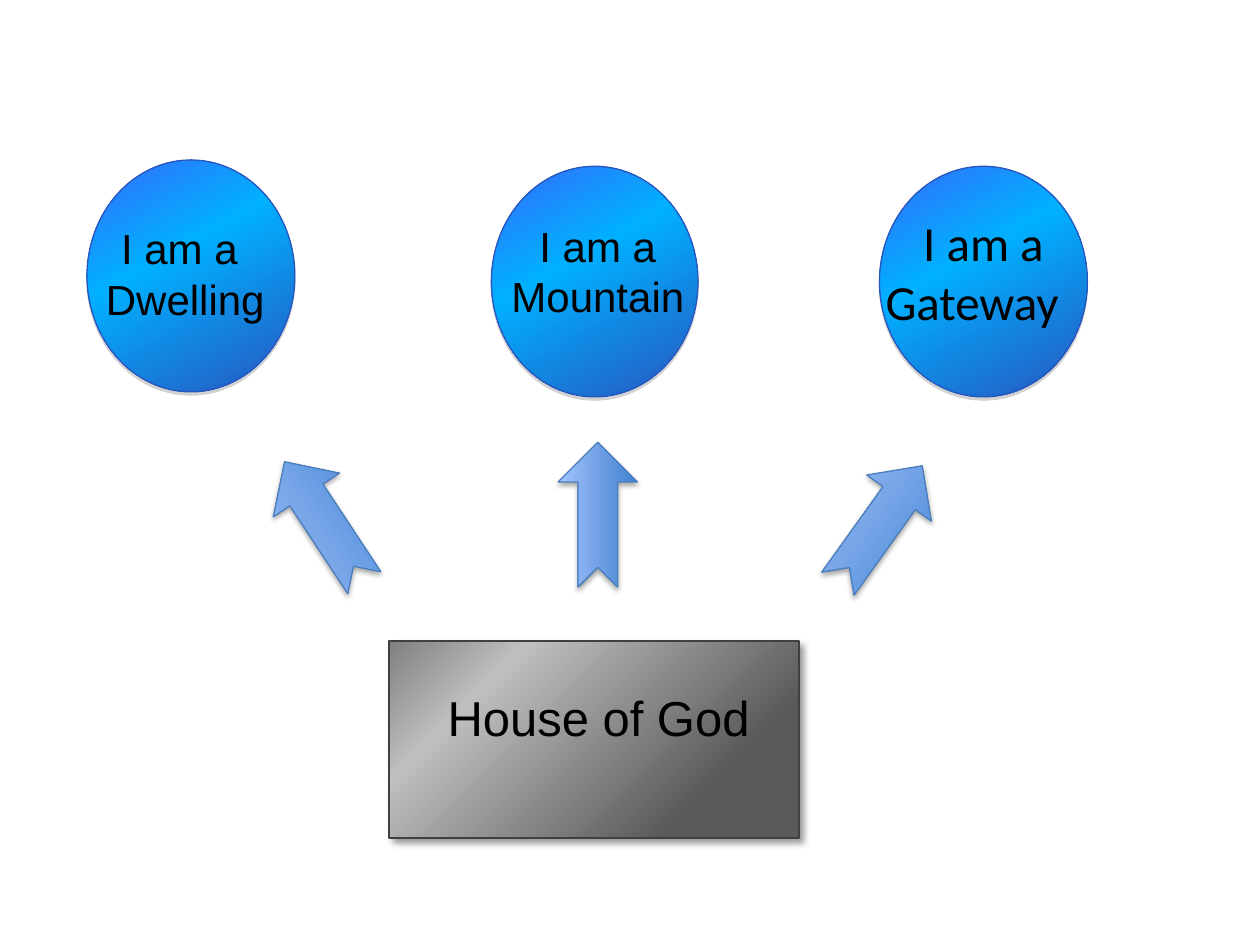
from dataclasses import dataclass

from lxml import etree
from pptx import Presentation
from pptx import util as u
from pptx.dml.color import RGBColor
from pptx.enum import shapes, text
from pptx.oxml import parse_xml
from pptx.oxml.ns import nsdecls, qn

BLACK = RGBColor(0x00, 0x00, 0x00)
GREY = RGBColor(0x80, 0x80, 0x80)
SILVER = RGBColor(0xBF, 0xBF, 0xBF)
SLATE = RGBColor(0x59, 0x59, 0x59)
CHARCOAL = RGBColor(0x40, 0x40, 0x40)
ROYAL = RGBColor(0x33, 0x6F, 0xFA)
SKY = RGBColor(0x00, 0xB0, 0xFF)
NAVY = RGBColor(0x28, 0x56, 0xBF)
STEEL = RGBColor(0x3F, 0x80, 0xCE)
PALE = RGBColor(0xA4, 0xC4, 0xFF)
STEEL_EDGE = RGBColor(0x4B, 0x7E, 0xBC)


@dataclass(frozen=True)
class Shadow:
    color: RGBColor
    alpha: int
    blur: float
    distance: float
    direction: int


@dataclass(frozen=True)
class Style:
    preset: shapes.MSO_SHAPE
    stops: tuple[tuple[int, RGBColor], ...]
    angle: int
    edge: RGBColor
    edge_width: float
    shadow: Shadow


@dataclass(frozen=True)
class Box:
    left: float
    top: float
    width: float
    height: float

    def lengths(self) -> list[u.Length]:
        return [u.Inches(v) for v in (self.left, self.top, self.width, self.height)]


@dataclass(frozen=True)
class Label:
    wording: str
    box: Box
    size: int
    font: str = "Arial"
    margins: tuple[float, float, float, float] = (0, 0, 0, 0)
    wrap: bool = True
    first_indent: float = 0


HOUSE = Style(shapes.MSO_SHAPE.RECTANGLE, ((22, SLATE), (77, SILVER), (100, GREY)),
              225, CHARCOAL, 1, Shadow(BLACK, 40, 4, 3, 45))
CIRCLE = Style(shapes.MSO_SHAPE.OVAL,
               ((0, ROYAL), (2, ROYAL), (40, SKY), (100, NAVY)),
               61, NAVY, 0.75, Shadow(GREY, 35, 0, 1.8, 90))
ARROW = Style(shapes.MSO_SHAPE.NOTCHED_RIGHT_ARROW, ((0, STEEL), (100, PALE)),
              270, STEEL_EDGE, 0.75, Shadow(BLACK, 35, 3.1, 1.8, 90))

CIRCLES = (Box(0.69, 1.27, 1.65, 1.84), Box(6.98, 1.32, 1.65, 1.83),
           Box(3.9, 1.32, 1.64, 1.83))
ARROWS = ((4.17, 3.77, 270), (2, 3.83, 236.6), (6.41, 3.85, 305.6))
LABELS = (
    Label("House of God", Box(3.16, 5.46, 3.18, 0.47), 28),
    Label("I am a Gateway", Box(6.89, 1.69, 1.83, 0.94), 28, "Calibri",
          margins=(0, 0, 0.18, 0), first_indent=0.18),
    Label("I am a Mountain", Box(3.83, 1.75, 1.83, 0.81), 24),
    Label("I am a \vDwelling", Box(0.73, 1.72, 1.48, 0.91), 24,
          margins=(0.1, 0.05, 0.1, 0.05), wrap=False),
)


def add_styled_shape(slide, style: Style, box: Box, rotation: float = 0) -> None:
    shape = slide.shapes.add_shape(style.preset, *box.lengths())
    shape.rotation = rotation
    shape.line.color.rgb = style.edge
    shape.line.width = u.Pt(style.edge_width)
    shape.shadow.inherit = False
    properties = shape._element.spPr

    # Gradient fill, turning with the shape
    stops = "".join(f'<a:gs pos="{position * 1000}"><a:srgbClr val="{color}"/></a:gs>'
                    for position, color in style.stops)
    gradient = parse_xml(
        f'<a:gradFill {nsdecls("a")} rotWithShape="1"><a:gsLst>{stops}</a:gsLst>'
        f'<a:lin ang="{style.angle * 60000}" scaled="0"/></a:gradFill>')
    properties.find(qn("a:prstGeom")).addnext(gradient)

    # Outer shadow
    shadow = style.shadow
    outer = etree.SubElement(
        properties.find(qn("a:effectLst")), qn("a:outerShdw"),
        blurRad=str(u.Pt(shadow.blur)), dist=str(u.Pt(shadow.distance)),
        dir=str(shadow.direction * 60000), rotWithShape="0")
    color = etree.SubElement(outer, qn("a:srgbClr"), val=str(shadow.color))
    etree.SubElement(color, qn("a:alpha"), val=str(shadow.alpha * 1000))


def add_label(slide, label: Label) -> None:
    frame = slide.shapes.add_textbox(*label.box.lengths()).text_frame
    frame.word_wrap = label.wrap
    frame.auto_size = text.MSO_AUTO_SIZE.SHAPE_TO_FIT_TEXT
    (frame.margin_left, frame.margin_top, frame.margin_right,
     frame.margin_bottom) = [u.Inches(margin) for margin in label.margins]
    paragraph = frame.paragraphs[0]
    paragraph.text = label.wording
    paragraph.alignment = text.PP_ALIGN.CENTER
    if label.first_indent:
        paragraph._p.get_or_add_pPr().set("indent", str(u.Inches(label.first_indent)))
    paragraph.font.size = u.Pt(label.size)
    paragraph.font.name = label.font
    paragraph.font.color.rgb = BLACK


def main() -> None:
    presentation = Presentation()
    presentation.slide_width = u.Inches(10)
    presentation.slide_height = u.Inches(7.5)
    slide = presentation.slides.add_slide(presentation.slide_layouts[6])

    # House at the base, circles above, arrows between
    add_styled_shape(slide, HOUSE, Box(3.09, 5.09, 3.25, 1.56))
    for box in CIRCLES:
        add_styled_shape(slide, CIRCLE, box)
    for left, top, rotation in ARROWS:
        add_styled_shape(slide, ARROW, Box(left, top, 1.15, 0.63), rotation)

    # Wording on top
    for label in LABELS:
        add_label(slide, label)

    presentation.save("out.pptx")


if __name__ == "__main__":
    main()
